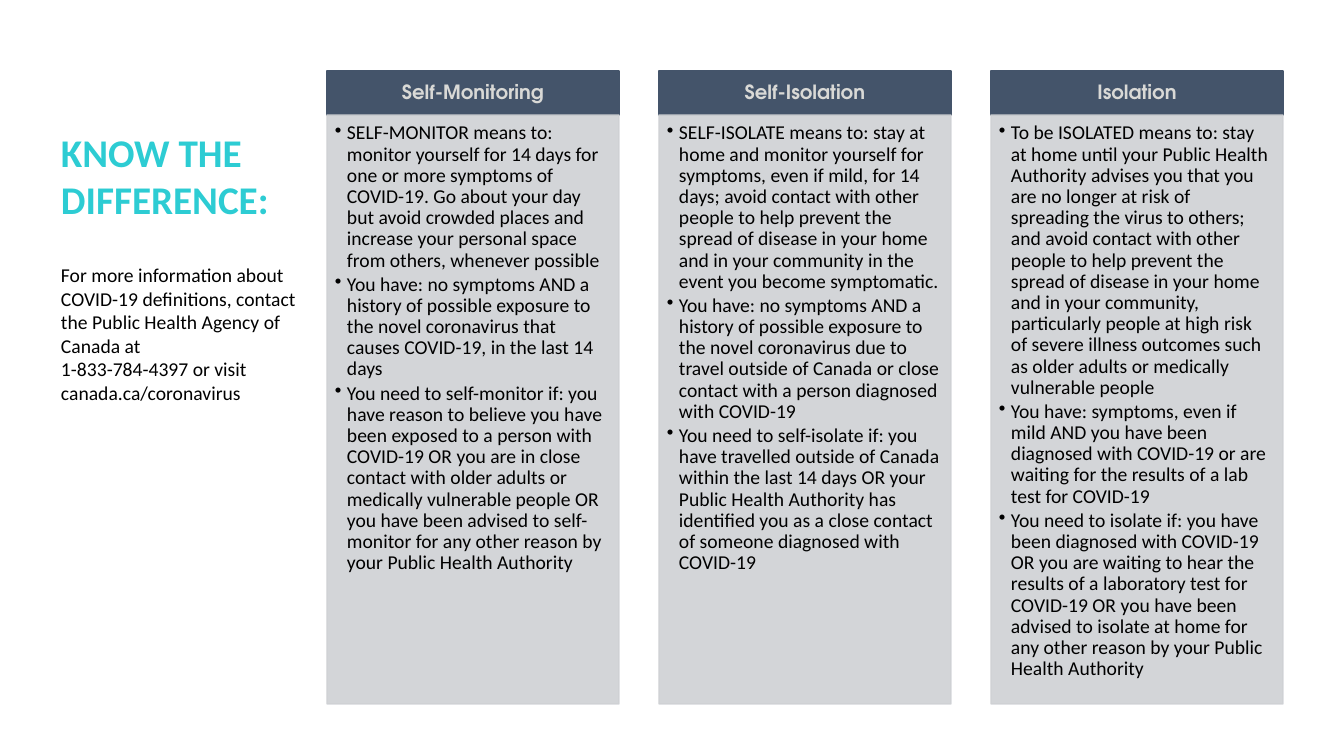
from dataclasses import dataclass

from lxml.etree import SubElement
from pptx import Presentation
from pptx.dml.color import RGBColor
from pptx.enum.shapes import MSO_SHAPE as Preset
from pptx.enum.text import MSO_ANCHOR as Anchor, MSO_AUTO_SIZE as AutoSize, PP_ALIGN as Align
from pptx.oxml.ns import qn
from pptx.util import Emu, Pt

EMU_PER_PX = 914400 / 100.8
SLIDE_W, SLIDE_H = 1344, 756

COLOURS = {
    "heading": "44546A",
    "heading_text": "D9D9D6",
    "panel": "CFD1D4",
    "title": "2DCCD3",
    "text": "000000",
}
BODY_FONT, HEADING_FONT = "Calibri", "TeX Gyre Adventor"

# Column grid
COLUMN_LEFT, COLUMN_PITCH, COLUMN_W = 327, 332, 292
HEADING_TOP, HEADING_H, PANEL_H = 71, 44, 589
BULLET_INDENT = 12


@dataclass(frozen=True)
class Column:
    heading: str
    points: list[str]


COLUMNS = [
    Column("Self-Monitoring", [
        "SELF-MONITOR means to: monitor yourself for 14 days for one or more symptoms of "
        "COVID-19. Go about your day but avoid crowded places and increase your personal "
        "space from others, whenever possible",
        "You have: no symptoms AND a history of possible exposure to the novel coronavirus "
        "that causes COVID-19, in the last 14 days",
        "You need to self-monitor if: you have reason to believe you have been exposed to a "
        "person with COVID-19 OR you are in close contact with older adults or medically "
        "vulnerable people OR you have been advised to self-monitor for any other reason by "
        "your Public Health Authority",
    ]),
    Column("Self-Isolation", [
        "SELF-ISOLATE means to: stay at home and monitor yourself for symptoms, even if "
        "mild, for 14 days; avoid contact with other people to help prevent the spread of "
        "disease in your home and in your community in the event you become symptomatic.",
        "You have: no symptoms AND a history of possible exposure to the novel coronavirus "
        "due to travel outside of Canada or close contact with a person diagnosed with "
        "COVID-19",
        "You need to self-isolate if: you have travelled outside of Canada within the last "
        "14 days OR your Public Health Authority has identified you as a close contact of "
        "someone diagnosed with COVID-19",
    ]),
    Column("Isolation", [
        "To be ISOLATED means to: stay at home until your Public Health Authority advises "
        "you that you are no longer at risk of spreading the virus to others; and avoid "
        "contact with other people to help prevent the spread of disease in your home and "
        "in your community, particularly people at high risk of severe illness outcomes "
        "such as older adults or medically vulnerable people",
        "You have: symptoms, even if mild AND you have been diagnosed with COVID-19 or are "
        "waiting for the results of a lab test for COVID-19",
        "You need to isolate if: you have been diagnosed with COVID-19 OR you are waiting "
        "to hear the results of a laboratory test for COVID-19 OR you have been advised to "
        "isolate at home for any other reason by your Public Health Authority",
    ]),
]

# A no-break space keeps "visit" with the address
CONTACT = [
    "For more information about COVID-19 definitions, contact the Public Health Agency of "
    "Canada at",
    "1-833-784-4397 or visit canada.ca/coronavirus",
]


def px(length: int) -> Emu:
    return Emu(round(length * EMU_PER_PX))


def colour(name: str) -> RGBColor:
    return RGBColor.from_string(COLOURS[name])


def add_bullet(paragraph) -> None:
    properties = paragraph._p.get_or_add_pPr()
    properties.set("marL", str(px(BULLET_INDENT)))
    properties.set("indent", str(-px(BULLET_INDENT)))
    SubElement(properties, qn("a:buChar"), char="•")


def write(frame, paragraphs: list[str], *, size: int = 14, font: str = BODY_FONT,
          fill: str = "text", bold: bool = False, align=Align.LEFT, anchor=Anchor.TOP,
          line_spacing: float = 1.0, space_after: float = 0, bullets: bool = False,
          insets: tuple[int, int, int, int] = (10, 5, 10, 5)) -> None:
    frame.word_wrap = True
    frame.auto_size = AutoSize.NONE
    frame.vertical_anchor = anchor
    (frame.margin_left, frame.margin_top,
     frame.margin_right, frame.margin_bottom) = map(px, insets)
    for index, text in enumerate(paragraphs):
        paragraph = frame.add_paragraph() if index else frame.paragraphs[0]
        paragraph.alignment = align
        paragraph.line_spacing = line_spacing
        paragraph.space_before = Pt(0)
        paragraph.space_after = Pt(space_after)
        if bullets:
            add_bullet(paragraph)
        run = paragraph.add_run()
        run.text = text
        run.font.size, run.font.name, run.font.bold = Pt(size), font, bold
        run.font.color.rgb = colour(fill)


def add_block(slide, left: int, top: int, height: int, fill: str, opacity: int = 100):
    block = slide.shapes.add_shape(
        Preset.RECTANGLE, px(left), px(top), px(COLUMN_W), px(height))
    block.shadow.inherit = False
    block.fill.solid()
    block.line.width = Pt(1)
    for paint in (block.fill.fore_color, block.line.color):
        paint.rgb = colour(fill)
    if opacity < 100:
        for tint in block._element.spPr.iter(qn("a:srgbClr")):
            SubElement(tint, qn("a:alpha"), val=str(opacity * 1000))
    return block


def add_column(slide, column: Column, left: int) -> None:
    heading = add_block(slide, left, HEADING_TOP, HEADING_H, "heading")
    write(heading.text_frame, [column.heading], font=HEADING_FONT, fill="heading_text",
          bold=True, align=Align.CENTER, anchor=Anchor.MIDDLE, line_spacing=0.9,
          insets=(11, 6, 11, 6))
    panel = add_block(slide, left, HEADING_TOP + HEADING_H, PANEL_H, "panel", opacity=90)
    write(panel.text_frame, column.points, line_spacing=0.9, space_after=2.1,
          bullets=True, insets=(8, 8, 10, 12))


def main() -> None:
    deck = Presentation()
    deck.slide_width, deck.slide_height = px(SLIDE_W), px(SLIDE_H)
    slide = deck.slides.add_slide(deck.slide_layouts.get_by_name("Title Only"))

    # Title and contact details
    title = slide.shapes.title
    title.left, title.top, title.width, title.height = map(px, (51, 123, 256, 106))
    write(title.text_frame, ["KNOW THE DIFFERENCE:"], size=28, fill="title", bold=True)
    contact = slide.shapes.add_textbox(*map(px, (51, 258, 256, 153)))
    write(contact.text_frame, CONTACT)

    # Three definitions
    for index, column in enumerate(COLUMNS):
        add_column(slide, column, COLUMN_LEFT + index * COLUMN_PITCH)

    deck.save("out.pptx")


if __name__ == "__main__":
    main()
